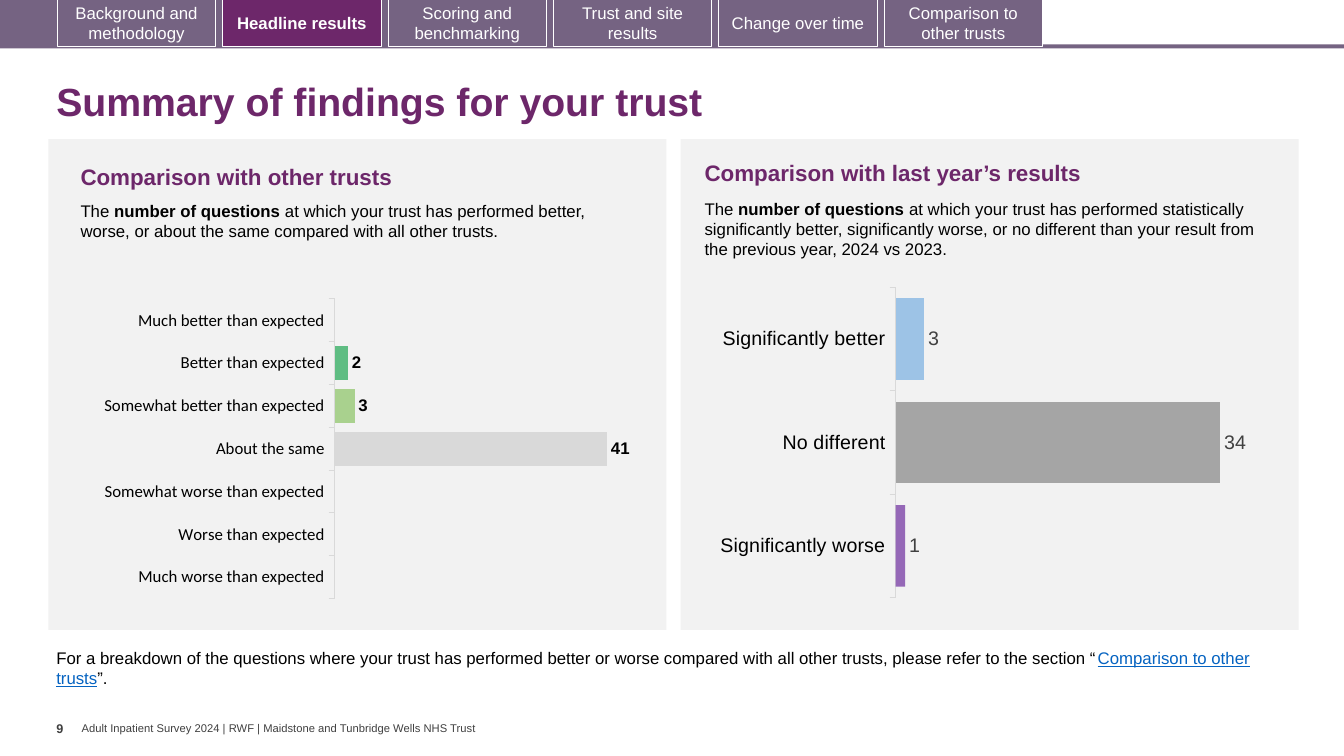
from lxml.etree import SubElement
from pptx import Presentation
from pptx.chart.data import CategoryChartData
from pptx.dml.color import RGBColor
from pptx.enum.chart import XL_CHART_TYPE, XL_LABEL_POSITION, XL_TICK_LABEL_POSITION, XL_TICK_MARK
from pptx.enum.shapes import MSO_SHAPE
from pptx.enum.text import MSO_ANCHOR, PP_ALIGN
from pptx.oxml import parse_xml
from pptx.oxml.ns import nsdecls, qn
from pptx.util import Inches, Pt

# Grid: square cells, a tenth of an inch each way
CELL = 0.1
COLUMNS, ROWS = 133.3, 75

PLUM = RGBColor(0x6D, 0x27, 0x6A)
MAUVE = RGBColor(0x75, 0x63, 0x82)
WHITE = RGBColor(0xFF, 0xFF, 0xFF)
BLACK = RGBColor(0x00, 0x00, 0x00)
CHARCOAL = RGBColor(0x40, 0x40, 0x40)
PANEL_GREY = RGBColor(0xF2, 0xF2, 0xF2)
AXIS_GREY = RGBColor(0xD9, 0xD9, 0xD9)
LINK_BLUE = RGBColor(0x05, 0x63, 0xC1)
SERIES_BLUE = RGBColor(0x44, 0x72, 0xC4)
TEAL = RGBColor(0x41, 0x99, 0x99)
GREEN = RGBColor(0x5F, 0xBD, 0x83)
LIGHT_GREEN = RGBColor(0xA9, 0xD1, 0x8E)
YELLOW = RGBColor(0xFF, 0xD9, 0x66)
AMBER = RGBColor(0xF1, 0xBE, 0x48)
ORANGE = RGBColor(0xE8, 0x77, 0x22)
SKY = RGBColor(0x9D, 0xC3, 0xE6)
MID_GREY = RGBColor(0xA5, 0xA5, 0xA5)
PURPLE = RGBColor(0x70, 0x30, 0xA0)


def grid(*cells):
    return [Inches(cell * CELL) for cell in cells]


def style_font(font, size=12, color=BLACK, bold=False, underline=None, name="Arial"):
    font.name, font.size, font.bold = name, Pt(size), bold
    font.underline = underline
    font.color.rgb = color


def add_text(paragraph, text, **style):
    run = paragraph.add_run()
    run.text = text
    style_font(run.font, **style)


class SlideBuilder:
    """Draws elements on one slide; every box is left, top, width, height in grid cells."""

    def __init__(self, slide):
        self.slide = slide

    def rectangle(self, box, fill=None, line=None):
        shape = self.slide.shapes.add_shape(MSO_SHAPE.RECTANGLE, *grid(*box))
        shape.shadow.inherit = False
        if fill is None:
            shape.fill.background()
        else:
            shape.fill.solid()
            shape.fill.fore_color.rgb = fill
        if line is None:
            shape.line.fill.background()
        else:
            shape.line.color.rgb = line
            shape.line.width = Pt(0.75)
        return shape

    def tab(self, box, label, active):
        shape = self.rectangle(box, PLUM if active else None, WHITE)
        frame = shape.text_frame
        frame.word_wrap = True
        frame.vertical_anchor = MSO_ANCHOR.MIDDLE
        frame.paragraphs[0].alignment = PP_ALIGN.CENTER
        add_text(frame.paragraphs[0], label, color=WHITE, bold=active)

    def text(self, box, *runs, anchor=MSO_ANCHOR.TOP, margins=(1, 0.5), spacing=None):
        frame = self.slide.shapes.add_textbox(*grid(*box)).text_frame
        frame.word_wrap = True
        frame.vertical_anchor = anchor
        side, end = grid(*margins)
        frame.margin_left = frame.margin_right = side
        frame.margin_top = frame.margin_bottom = end
        paragraph = frame.paragraphs[0]
        paragraph.line_spacing = spacing
        for words, style in runs:
            add_text(paragraph, words, **style)

    def bar_chart(self, box, bars, maximum, plot, axis_style, label_style):
        data = CategoryChartData(number_format="0")
        data.categories = [name for name, *_ in bars]
        data.add_series("Series 1", [value for _, value, *_ in bars])
        chart = self.slide.shapes.add_chart(
            XL_CHART_TYPE.BAR_CLUSTERED, *grid(*box), data).chart
        chart.has_legend = chart.has_title = False
        style_font(chart.font, **axis_style)

        # Axes
        category_axis, value_axis = chart.category_axis, chart.value_axis
        category_axis.reverse_order = True
        category_axis.has_major_gridlines = False
        category_axis.major_tick_mark = XL_TICK_MARK.OUTSIDE
        category_axis.tick_label_position = XL_TICK_LABEL_POSITION.LOW
        category_axis.format.line.color.rgb = AXIS_GREY
        category_axis.format.line.width = Pt(0.75)
        style_font(category_axis.tick_labels.font, **axis_style)
        value_axis.minimum_scale, value_axis.maximum_scale = 0, maximum
        value_axis.has_major_gridlines = False
        value_axis.visible = False

        # Bars and their labels
        bar_plot = chart.plots[0]
        bar_plot.gap_width = 27
        bar_plot.vary_by_categories = False
        series = bar_plot.series[0]
        series.invert_if_negative = False
        series.format.fill.solid()
        series.format.fill.fore_color.rgb = SERIES_BLUE
        for index, (_, _, color, *opacity) in enumerate(bars):
            point = series.points[index]
            point.format.fill.solid()
            point.format.fill.fore_color.rgb = color
            for percent in opacity:
                tint = next(point.format.fill._xPr.iter(qn("a:srgbClr")))
                SubElement(tint, qn("a:alpha"), val=str(percent * 1000))
        labels = series.data_labels
        labels.show_value = True
        labels.position = XL_LABEL_POSITION.OUTSIDE_END
        labels.number_format, labels.number_format_is_linked = "0", False
        style_font(labels.font, **label_style)

        # Inner plot area as shares of the chart
        modes = '<c:layoutTarget val="inner"/><c:xMode val="edge"/><c:yMode val="edge"/>'
        sizes = "".join(f'<c:{key} val="{share}"/>' for key, share in zip("xywh", plot))
        layout = parse_xml(f'<c:layout {nsdecls("c")}><c:manualLayout>'
                           f'{modes}{sizes}</c:manualLayout></c:layout>')
        plot_area = chart._chartSpace.chart.plotArea
        for old_layout in plot_area.findall(qn("c:layout")):
            plot_area.remove(old_layout)
        plot_area.insert(0, layout)


def main():
    presentation = Presentation()
    presentation.slide_width, presentation.slide_height = grid(COLUMNS, ROWS)
    builder = SlideBuilder(presentation.slides.add_slide(presentation.slide_layouts[6]))

    # Navigation tabs
    builder.rectangle((0, 4.4, COLUMNS, 0.4), MAUVE)
    builder.rectangle((0, 0, 103.4, 4.7), MAUVE)
    tabs = ["Background and methodology", "Headline results", "Scoring and benchmarking",
            "Trust and site results", "Change over time", "Comparison to other trusts"]
    for index, label in enumerate(tabs):
        builder.tab((5.7 + 16.4 * index, -0.1, 15.7, 4.7), label, label == "Headline results")

    # Title
    builder.text((4.6, 6.7, 124.9, 7.2),
                 ("Summary of findings for your trust", dict(size=28, color=PLUM, bold=True)),
                 anchor=MSO_ANCHOR.MIDDLE, spacing=0.9)

    # Panels with heading and introduction
    panels = [
        (4.8, (7, 15.7, 55.2, 3.7), (7, 19.4, 52.9, 7.1), "Comparison with other trusts",
         "at which your trust has performed better, worse, or about the same "
         "compared with all other trusts."),
        (67.5, (68.9, 15.3, 54.8, 3.7), (68.9, 19.2, 57.4, 7.1),
         "Comparison with last year’s results",
         "at which your trust has performed statistically significantly better, significantly "
         "worse, or no different than your result from the previous year, 2024 vs 2023."),
    ]
    for left, heading_box, intro_box, heading, intro in panels:
        builder.rectangle((left, 13.8, 61.3, 48.7), PANEL_GREY)
        builder.text(heading_box, (heading, dict(size=16, color=PLUM, bold=True)))
        builder.text(intro_box, ("The ", {}), ("number of questions ", dict(bold=True)),
                     (intro, {}))

    # Charts: category, value, colour and optional opacity
    builder.bar_chart(
        (4.1, 27.2, 62.3, 34.1),
        [("Much better than expected", None, TEAL),
         ("Better than expected", 2, GREEN),
         ("Somewhat better than expected", 3, LIGHT_GREEN),
         ("About the same", 41, AXIS_GREY),
         ("Somewhat worse than expected", None, YELLOW),
         ("Worse than expected", None, AMBER),
         ("Much worse than expected", None, ORANGE)],
        45, (0.467, 0.072, 0.476, 0.872), dict(name="Calibri"), dict(bold=True))
    builder.bar_chart(
        (66.4, 27.3, 62.3, 33.9),
        [("Significantly better", 3, SKY),
         ("No different", 34, MID_GREY),
         ("Significantly worse", 1, PURPLE, 71)],
        40, (0.36, 0.035, 0.608, 0.909), dict(size=14), dict(size=14, color=CHARCOAL))

    # Closing note and footer
    builder.text((4.6, 63.8, 122.1, 5),
                 ("For a breakdown of the questions where your trust has performed better or worse "
                  "compared with all other trusts, please refer to the section “", {}),
                 ("Comparison to other trusts", dict(color=LINK_BLUE, underline=True)),
                 ("”.", {}))
    builder.text((5.6, 71, 2.5, 4), ("9", dict(size=9, color=CHARCOAL, bold=True)),
                 margins=(0, 0.5))
    builder.text((8.1, 71.6, 61, 1.3),
                 ("Adult Inpatient Survey 2024 | RWF | Maidstone and Tunbridge Wells NHS Trust",
                  dict(size=8, color=CHARCOAL)),
                 anchor=MSO_ANCHOR.MIDDLE, margins=(0, 0))

    presentation.save("out.pptx")


if __name__ == "__main__":
    main()
